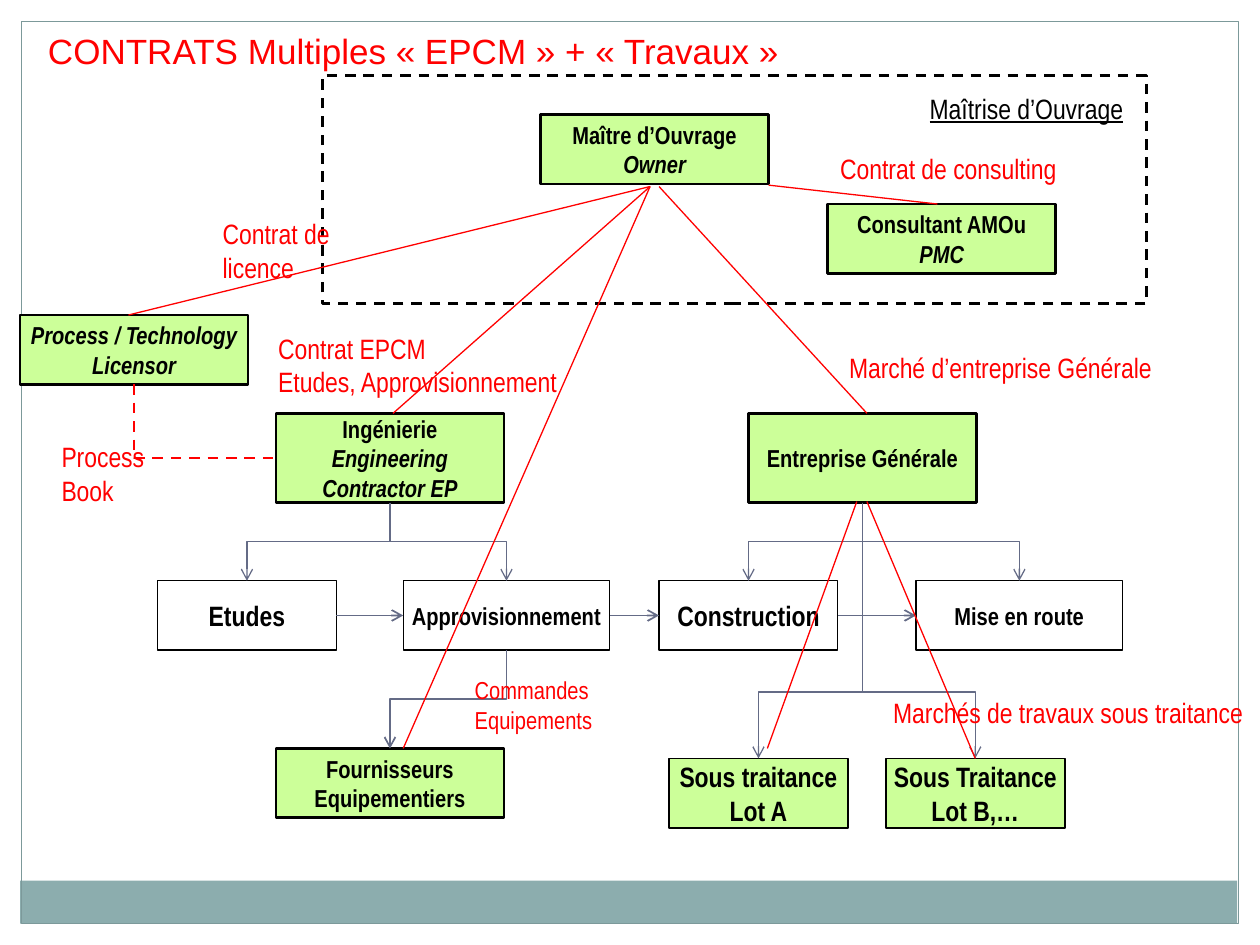
from dataclasses import dataclass
from typing import NamedTuple, Optional

from lxml.etree import SubElement
from pptx import Presentation
from pptx.dml.color import RGBColor
from pptx.enum.dml import MSO_LINE_DASH_STYLE as Dash
from pptx.enum.shapes import MSO_CONNECTOR as Connector, MSO_SHAPE as Shape
from pptx.enum.text import MSO_ANCHOR as Anchor, MSO_AUTO_SIZE as AutoSize, PP_ALIGN as Align
from pptx.oxml.ns import qn
from pptx.util import Pt

COLORS = {
    "black": "000000", "red": "FF0000", "green": "CCFF99",
    "slate": "646B86", "band": "8CADAE", "border": "7C999A",
}
FONT = "Arial Narrow"
TOP, LEFT, BOTTOM, RIGHT = 0, 1, 2, 3
WIDE, MEDIUM, NARROW = 130.3, 118.1, 102.2
LOW, TALL = 39.6, 51.1
CONTRACTOR_TOP, TASK_TOP, LOT_TOP = 236.2, 331.9, 433.4


class Phrase(NamedTuple):
    text: str
    italic: bool = False


@dataclass
class Box:
    phrases: list[Phrase]
    left: float
    top: float
    width: float = WIDE
    height: float = LOW
    size: int = 14
    fill: Optional[str] = "green"
    border: float = 1.5


@dataclass
class Label:
    lines: list[str]
    left: float
    top: float
    width: float
    height: float = 26.6
    size: int = 16
    color: str = "red"
    underline: bool = False


class Elbow(NamedTuple):
    """A connector that leaves the source downwards; bend is the share of the drop."""
    source: str
    target: str
    bend: float = 0.5
    weight: float = 0.75


class Ray(NamedTuple):
    start: tuple[float, float]
    end: tuple[float, float]
    target: Optional[str] = None


BOXES = {
    "owner": Box([Phrase("Maître d’Ouvrage"), Phrase("Owner", True)], 308.9, 65.5),
    "consultant": Box([Phrase("Consultant AMOu"), Phrase("PMC", True)], 473, 116.6),
    "engineering": Box([Phrase("Ingénierie"), Phrase("Engineering", True),
                        Phrase("Contractor EP", True)], 157.7, CONTRACTOR_TOP, height=TALL),
    "general": Box([Phrase("Entreprise Générale")], 427.7, CONTRACTOR_TOP, height=TALL),
    "studies": Box([Phrase("Etudes")], 90, TASK_TOP, NARROW, size=16, fill=None, border=0.75),
    "supply": Box([Phrase("Approvisionnement")], 230.4, TASK_TOP, MEDIUM, fill=None, border=0.75),
    "construction": Box([Phrase("Construction")], 376.6, TASK_TOP, NARROW, size=16,
                        fill=None, border=0.75),
    "startup": Box([Phrase("Mise en route")], 523.4, TASK_TOP, MEDIUM, fill=None, border=0.75),
    "lot_b": Box([Phrase("Sous Traitance"), Phrase("Lot B,…")], 506.2, LOT_TOP, NARROW,
                 size=16, border=1),
    "lot_a": Box([Phrase("Sous traitance"), Phrase("Lot A")], 382.3, LOT_TOP, NARROW,
                 size=16, border=1),
    "suppliers": Box([Phrase("Fournisseurs"), Phrase("Equipementiers")], 157.7, 427.7),
    "licensor": Box([Phrase("Process / Technology", True), Phrase("Licensor", True)], 11.5, 180),
}
ELBOWS = [
    Elbow("engineering", "studies"), Elbow("engineering", "supply"),
    Elbow("general", "construction"), Elbow("general", "startup"),
    Elbow("general", "lot_b", 0.74), Elbow("general", "lot_a", 0.74),
    Elbow("supply", "suppliers", weight=1),
]
TASKS = ["studies", "supply", "construction", "startup"]
OWNER_EXIT = (371.5, 106.6)
RAYS = [
    Ray((439.2, 105.8), (535.7, 116.6)),
    Ray((376.6, 106.6), (495.4, 236.2)),
    Ray(OWNER_EXIT, (224.6, 236.2)),
    Ray(OWNER_EXIT, (230.4, 427.7)),
    Ray(OWNER_EXIT, (73.4, 180)),
    Ray((489.6, 286.6), (438.5, 427.7)),
    Ray((495.4, 286.6), (557.2, 433.4), "lot_b"),
]
LABELS = [
    Label(["Maîtrise d’Ouvrage"], 524.2, 49, 125.3, color="black", underline=True),
    Label(["Contrat de licence"], 120.2, 120.2, 119.5),
    Label(["Contrat de consulting"], 473, 82.8, 138.2),
    Label(["Contrat EPCM", "Etudes, Approvisionnement"], 151.9, 185.8, 175, 46.1),
    Label(["Marché d’entreprise Générale"], 478.1, 196.6, 189.4),
    Label(["Marchés de travaux sous traitance"], 503.3, 393.8, 216.7),
    Label(["Commandes", "Equipements"], 264.2, 382.3, 81.4, 41, size=14),
    Label(["Process", "Book"], 28.1, 247.7, 61.9, 46.1),
]


def rgb(name: str) -> RGBColor:
    return RGBColor.from_string(COLORS[name])


def add_run(paragraph, text: str, size: float, color: str, font: str = FONT,
            bold: bool = False, italic: bool = False, underline: bool = False) -> None:
    run = paragraph.add_run()
    run.text = text
    run.font.name, run.font.size = font, Pt(size)
    run.font.bold, run.font.italic, run.font.underline = bold, italic, underline
    run.font.color.rgb = rgb(color)


def paragraph_at(frame, index: int):
    return frame.paragraphs[0] if index == 0 else frame.add_paragraph()


def add_rectangle(slide, left: float, top: float, width: float, height: float,
                  fill: Optional[str] = None, border: Optional[str] = None, weight: float = 1):
    shape = slide.shapes.add_shape(Shape.RECTANGLE, Pt(left), Pt(top), Pt(width), Pt(height))
    shape.shadow.inherit = False
    for part, color in ((shape.fill, fill), (shape.line.fill, border)):
        if color:
            part.solid()
            part.fore_color.rgb = rgb(color)
        else:
            part.background()
    if border:
        shape.line.width = Pt(weight)
    return shape


def add_box(slide, box: Box):
    shape = add_rectangle(slide, box.left, box.top, box.width, box.height,
                          box.fill, "black", box.border)
    frame = shape.text_frame
    frame.word_wrap, frame.vertical_anchor = False, Anchor.MIDDLE
    for index, phrase in enumerate(box.phrases):
        paragraph = paragraph_at(frame, index)
        paragraph.alignment = Align.CENTER
        add_run(paragraph, phrase.text, box.size, "black", bold=True, italic=phrase.italic)
    return shape


def add_label(slide, label: Label) -> None:
    frame = slide.shapes.add_textbox(Pt(label.left), Pt(label.top), Pt(label.width),
                                     Pt(label.height)).text_frame
    frame.word_wrap, frame.auto_size = False, AutoSize.SHAPE_TO_FIT_TEXT
    for index, line in enumerate(label.lines):
        add_run(paragraph_at(frame, index), line, label.size, label.color,
                underline=label.underline)


def add_link(slide, kind, color: str, weight: float, start=(0, 0), end=(0, 0),
             arrow: bool = False, dashed: bool = False):
    link = slide.shapes.add_connector(kind, *(Pt(value) for value in (*start, *end)))
    link.line.color.rgb = rgb(color)
    link.line.width = Pt(weight)
    if dashed:
        link.line.dash_style = Dash.DASH
    properties = link._element.spPr
    if arrow:
        SubElement(properties.find(qn("a:ln")), qn("a:tailEnd"), type="arrow")
    SubElement(properties, qn("a:effectLst"))
    return link


def join_downwards(link, source, target, site: int = TOP, bend: Optional[float] = None) -> None:
    """Join two boxes and turn the elbow so that it starts vertically; no bend means one corner."""
    link.begin_connect(source, BOTTOM)
    link.end_connect(target, site)
    run, drop = link.end_x - link.begin_x, link.end_y - link.begin_y
    center_x, center_y = link.begin_x + run // 2, link.begin_y + drop // 2
    link.width, link.height = drop, abs(run)
    link.left, link.top = center_x - drop // 2, center_y - abs(run) // 2
    transform = link._element.spPr.find(qn("a:xfrm"))
    transform.set("rot", str((270 if run > 0 else 90) * 60000))
    transform.set("flipH", "1" if run > 0 else "0")
    geometry = link._element.spPr.find(qn("a:prstGeom"))
    if bend is None:
        geometry.set("prst", "bentConnector2")
    else:
        SubElement(geometry.find(qn("a:avLst")), qn("a:gd"), name="adj1",
                   fmla=f"val {round(bend * 100000)}")


def add_title(slide, text: str) -> None:
    title = slide.shapes.title
    title.left, title.top, title.width, title.height = Pt(20.2), Pt(13), Pt(435.6), Pt(31.7)
    frame = title.text_frame
    frame.word_wrap, frame.vertical_anchor = False, Anchor.TOP
    frame.auto_size = AutoSize.SHAPE_TO_FIT_TEXT
    paragraph = frame.paragraphs[0]
    paragraph.alignment = Align.LEFT
    add_run(paragraph, text, 20, "red", font="Arial")


def main() -> None:
    presentation = Presentation()
    presentation.slide_width, presentation.slide_height = Pt(720), Pt(540)
    slide = presentation.slides.add_slide(presentation.slide_layouts[5])
    add_title(slide, "CONTRATS Multiples « EPCM » + « Travaux »")
    add_rectangle(slide, 11.5, 503.3, 695.5, 24.5, fill="band")
    add_rectangle(slide, 12.2, 12.2, 695.5, 515.5, border="border", weight=0.75)
    ownership = add_rectangle(slide, 184.3, 43.2, 470.9, 130.3, border="black", weight=1.5)
    ownership.line.dash_style = Dash.DASH

    shapes = {name: add_box(slide, box) for name, box in BOXES.items()}
    for elbow in ELBOWS:
        link = add_link(slide, Connector.ELBOW, "slate", elbow.weight, arrow=True)
        join_downwards(link, shapes[elbow.source], shapes[elbow.target], bend=elbow.bend)
    process_book = add_link(slide, Connector.ELBOW, "red", 1.5, dashed=True)
    join_downwards(process_book, shapes["licensor"], shapes["engineering"], LEFT)
    for source, target in zip(TASKS, TASKS[1:]):
        link = add_link(slide, Connector.STRAIGHT, "slate", 1, arrow=True)
        link.begin_connect(shapes[source], RIGHT)
        link.end_connect(shapes[target], LEFT)
    for ray in RAYS:
        link = add_link(slide, Connector.STRAIGHT, "red", 0.75, ray.start, ray.end)
        if ray.target:
            link.end_connect(shapes[ray.target], TOP)
    for label in LABELS:
        add_label(slide, label)
    presentation.save("out.pptx")


if __name__ == "__main__":
    main()
